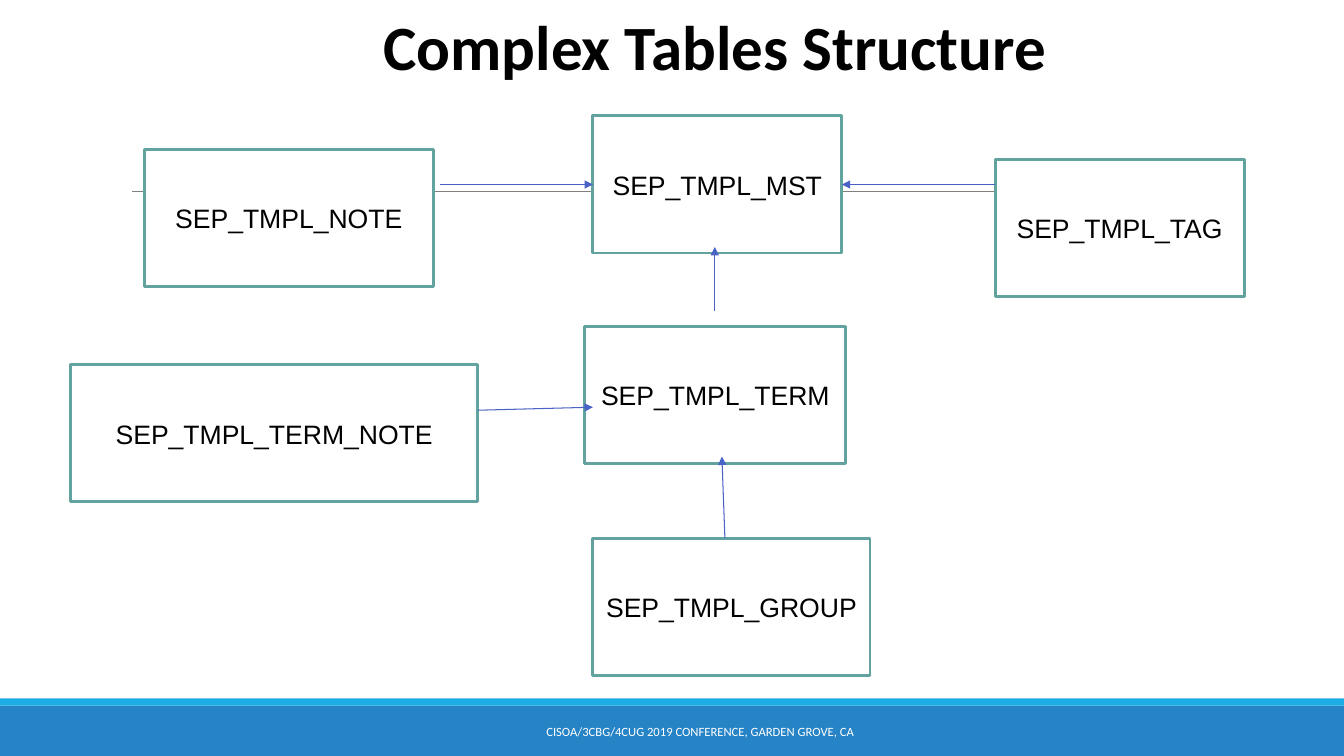
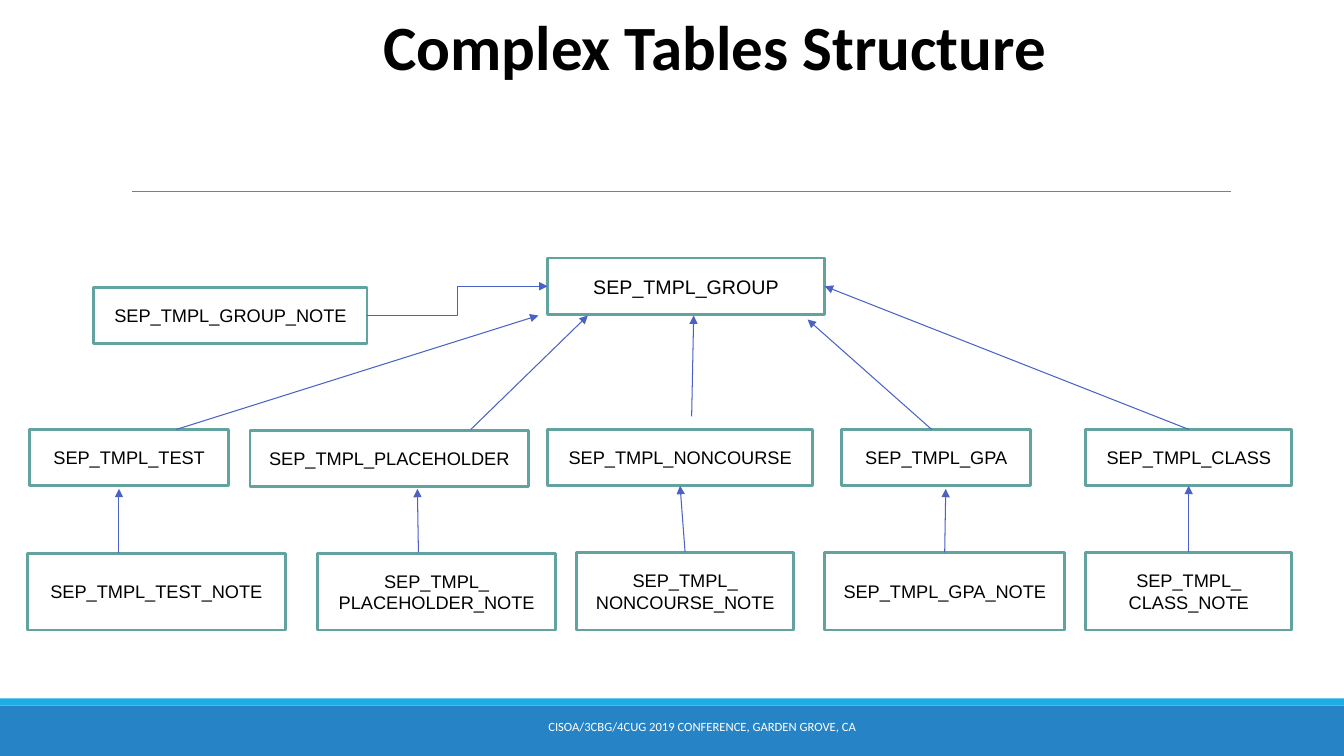
"""Build two slides that diagram the template tables and their links."""
from lxml.etree import SubElement
from pptx import Presentation
from pptx.dml.color import RGBColor
from pptx.enum.shapes import MSO_CONNECTOR, MSO_SHAPE
from pptx.enum.text import MSO_ANCHOR, MSO_AUTO_SIZE, PP_ALIGN
from pptx.oxml.ns import qn
from pptx.util import Inches, Pt

COLORS = {"band": "2683C6", "stripe": "1CADE4", "rule": "7F7F7F", "box": "62A39F",
          "arrow": "4962C5", "white": "FFFFFF", "text": "000000"}
TITLE = "Complex Tables Structure"
FOOTER = "CISOA/3CBG/4CUG 2019 CONFERENCE, GARDEN GROVE, CA"
TOP, LEFT, BOTTOM, RIGHT = range(4)

SLIDES = [
    {
        "footer": (5.32, 7.08),
        "boxes": [
            ("SEP_TMPL_MST", 5.88, 1.15, 2.47, 1.36, 19),
            ("SEP_TMPL_NOTE", 1.43, 1.48, 2.87, 1.36, 19),
            ("SEP_TMPL_TAG", 9.87, 1.58, 2.47, 1.36, 19),
            ("SEP_TMPL_TERM_NOTE", 0.7, 3.62, 4.04, 1.36, 19),
            ("SEP_TMPL_TERM", 5.8, 3.24, 2.59, 1.36, 19),
            ("SEP_TMPL_GROUP", 5.88, 5.34, 2.75, 1.36, 19),
        ],
        "arrows": [
            ((9.87, 1.83), ("SEP_TMPL_MST", RIGHT)),
            ((4.36, 1.83), ("SEP_TMPL_MST", LEFT)),
            ((7.09, 3.09), (7.09, 2.45)),
            ((4.74, 4.07), (5.88, 4.04)),
            ((7.19, 5.34), (7.16, 4.53)),
        ],
        "elbows": [],
    },
    {
        "footer": (5.34, 7.03),
        "boxes": [
            ("SEP_TMPL_GROUP", 5.43, 2.56, 2.75, 0.56, 14),
            ("SEP_TMPL_TEST", 0.29, 4.26, 1.98, 0.56, 13),
            ("SEP_TMPL_PLACEHOLDER", 2.48, 4.27, 2.76, 0.56, 13),
            ("SEP_TMPL_NONCOURSE", 5.43, 4.26, 2.63, 0.56, 13),
            ("SEP_TMPL_GPA", 8.35, 4.26, 1.87, 0.56, 13),
            ("SEP_TMPL_CLASS", 10.77, 4.26, 2.04, 0.56, 13),
            ("SEP_TMPL_GROUP_NOTE", 0.93, 2.85, 2.71, 0.56, 13),
            ("SEP_TMPL_TEST_NOTE", 0.27, 5.49, 2.56, 0.76, 13),
            ("SEP_TMPL_\nPLACEHOLDER_NOTE", 3.15, 5.49, 2.36, 0.76, 13),
            ("SEP_TMPL_\nNONCOURSE_NOTE", 5.72, 5.48, 2.15, 0.77, 13),
            ("SEP_TMPL_GPA_NOTE", 8.18, 5.48, 2.38, 0.77, 13),
            ("SEP_TMPL_\nCLASS_NOTE", 10.77, 5.48, 2.04, 0.77, 13),
        ],
        "arrows": [
            ((1.75, 4.26), (5.34, 3.13)),
            ((4.67, 4.26), (5.83, 3.13)),
            ((6.86, 4.13), (6.88, 3.13)),
            ((9.24, 4.26), (8.01, 3.17)),
            (("SEP_TMPL_CLASS", TOP), ("SEP_TMPL_GROUP", RIGHT)),
            ((4.15, 5.48), (4.14, 4.85)),
            (("SEP_TMPL_\nCLASS_NOTE", TOP), ("SEP_TMPL_CLASS", BOTTOM)),
            (("SEP_TMPL_GPA_NOTE", TOP), (9.38, 4.85)),
            ((1.18, 5.49), (1.18, 4.85)),
            (("SEP_TMPL_\nNONCOURSE_NOTE", TOP), ("SEP_TMPL_NONCOURSE", BOTTOM)),
        ],
        "elbows": [(("SEP_TMPL_GROUP_NOTE", RIGHT), ("SEP_TMPL_GROUP", LEFT))],
    },
]


def write(sp, text, size, font, color, align=PP_ALIGN.CENTER, bold=False):
    tf = sp.text_frame
    tf.word_wrap = True
    tf.auto_size = MSO_AUTO_SIZE.NONE
    p = tf.paragraphs[0]
    p.alignment = align
    for i, line in enumerate(text.split("\n")):
        if i:
            p.add_line_break()
        r = p.add_run()
        r.text = line
        r.font.size, r.font.name, r.font.bold = Pt(size), font, bold
        r.font.color.rgb = RGBColor.from_string(COLORS[color])
    return tf


def connect(s, start, end, color, kind=MSO_CONNECTOR.STRAIGHT, boxes=None, head=True):
    c = s.shapes.add_connector(kind, 0, 0, 0, 0)
    if isinstance(start[0], str):
        c.begin_connect(boxes[start[0]], start[1])
    else:
        c.begin_x, c.begin_y = Inches(start[0]), Inches(start[1])
    if isinstance(end[0], str):
        c.end_connect(boxes[end[0]], end[1])
    else:
        c.end_x, c.end_y = Inches(end[0]), Inches(end[1])
    c.line.color.rgb = RGBColor.from_string(COLORS[color])
    c.line.width = Pt(0.75)
    if head:
        SubElement(c.line._get_or_add_ln(), qn("a:tailEnd"), type="triangle")
    SubElement(c._element.spPr, qn("a:effectLst"))


prs = Presentation()
prs.slide_width, prs.slide_height = Inches(13.33), Inches(7.5)

for data in SLIDES:
    s = prs.slides.add_slide(prs.slide_layouts[5])

    for color, top, height in (("band", 7, 0.5), ("stripe", 6.93, 0.07)):
        sp = s.shapes.add_shape(MSO_SHAPE.RECTANGLE, 0, Inches(top), prs.slide_width, Inches(height))
        sp.shadow.inherit = False
        sp.fill.solid()
        sp.fill.fore_color.rgb = RGBColor.from_string(COLORS[color])
        sp.line.fill.background()
    connect(s, (1.31, 1.9), (12.21, 1.9), "rule", head=False)

    title = s.shapes.title
    title.left, title.top, title.width, title.height = Inches(1.72), Inches(0.03), Inches(10.74), Inches(0.85)
    tf = write(title, TITLE, 45, "Calibri", "text", bold=True)
    tf.vertical_anchor = MSO_ANCHOR.BOTTOM
    tf.paragraphs[0].line_spacing = 0.85

    boxes = {}
    for name, x, y, w, h, size in data["boxes"]:
        sp = s.shapes.add_shape(MSO_SHAPE.RECTANGLE, Inches(x), Inches(y), Inches(w), Inches(h))
        sp.shadow.inherit = False
        sp.fill.solid()
        sp.fill.fore_color.rgb = RGBColor.from_string(COLORS["white"])
        sp.line.color.rgb = RGBColor.from_string(COLORS["box"])
        sp.line.width = Pt(2)
        tf = write(sp, name, size, "Arial", "text")
        tf.vertical_anchor = MSO_ANCHOR.MIDDLE
        tf.margin_left = tf.margin_right = Inches(0.13)
        tf.margin_top = tf.margin_bottom = Inches(0.07)
        boxes[name] = sp

    for start, end in data["elbows"]:
        connect(s, start, end, "arrow", MSO_CONNECTOR.ELBOW, boxes)
    for start, end in data["arrows"]:
        connect(s, start, end, "arrow", boxes=boxes)

    x, y = data["footer"]
    sp = s.shapes.add_textbox(Inches(x), Inches(y), Inches(3.4), Inches(0.35))
    tf = write(sp, FOOTER, 9, "Calibri", "white", PP_ALIGN.LEFT)
    tf.margin_left = tf.margin_right = tf.margin_top = tf.margin_bottom = Inches(0.1)

prs.save("out.pptx")
